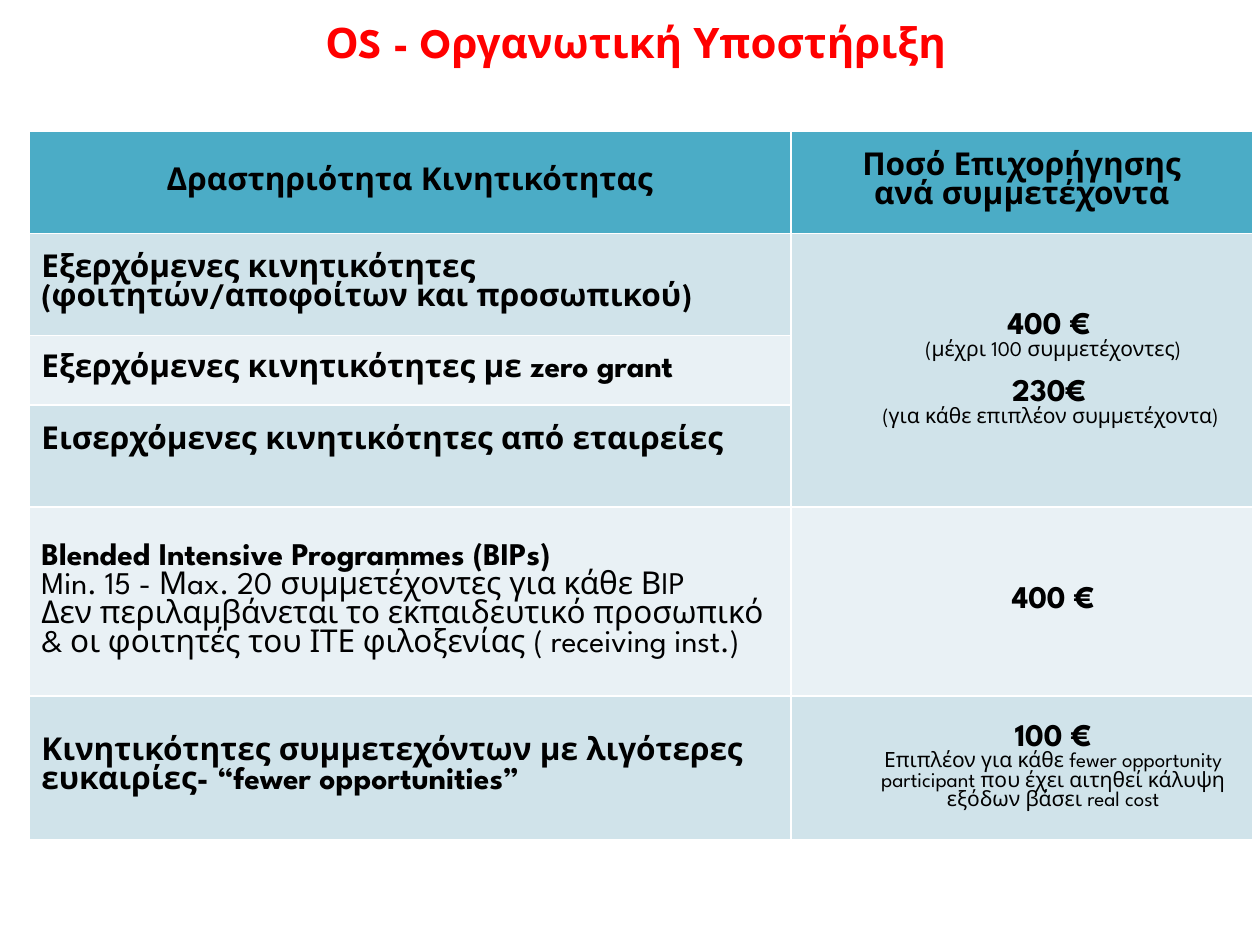
from lxml import etree
from pptx import Presentation
from pptx import util as u
from pptx.dml.color import RGBColor
from pptx.enum import text
from pptx.oxml import ns

RED = RGBColor(0xFF, 0x00, 0x00)
BLACK = RGBColor(0x00, 0x00, 0x00)
TEAL = RGBColor(0x4B, 0xAC, 0xC6)
BLUE = RGBColor(0xD0, 0xE3, 0xEA)
PALE = RGBColor(0xE9, 0xF1, 0xF5)
FONT = "League Spartan"
LEFT, CENTER = text.PP_ALIGN.LEFT, text.PP_ALIGN.CENTER


def write(frame, content, *, size=18, bold=True, color=BLACK, align=LEFT, indent=0, before=0):
    paragraph = frame.paragraphs[0]
    if paragraph.runs:
        paragraph = frame.add_paragraph()
    paragraph.alignment = align
    paragraph.space_before = u.Pt(before)
    if indent:
        properties = paragraph._p.get_or_add_pPr()
        properties.set("marL", str(u.Pt(indent)))
        properties.set("indent", "0")
    run = paragraph.add_run()
    run.text = content
    run.font.name = FONT
    run.font.size = u.Pt(size)
    run.font.bold = bold
    run.font.color.rgb = color


def add_borders(cell):
    properties = cell._tc.get_or_add_tcPr()
    for position, side in enumerate(("lnL", "lnR", "lnT", "lnB")):
        line = etree.Element(ns.qn("a:" + side), w=str(u.Pt(1)))
        solid = etree.SubElement(line, ns.qn("a:solidFill"))
        etree.SubElement(solid, ns.qn("a:srgbClr"), val="FFFFFF")
        properties.insert(position, line)


presentation = Presentation()
presentation.slide_width, presentation.slide_height = u.Pt(720), u.Pt(540)
slide = presentation.slides.add_slide(presentation.slide_layouts[5])

title = slide.shapes.title
title.left, title.top, title.width, title.height = u.Pt(42.5), u.Pt(9.4), u.Pt(648), u.Pt(60.5)
frame = title.text_frame
frame.margin_left = frame.margin_right = frame.margin_top = frame.margin_bottom = 0
frame.vertical_anchor = text.MSO_ANCHOR.TOP
write(frame, "ΟS - Oργανωτική Υποστήριξη ", size=24, color=RED, align=CENTER)

column_widths = [435.6, 263.5]
row_heights = [58.3, 58.3, 39.6, 58.3, 108, 82]
row_fills = [TEAL, BLUE, PALE, BLUE, PALE, BLUE]
plain = dict(bold=False)
heading = dict(align=CENTER)
amount = dict(align=CENTER, indent=36)
note = dict(amount, size=12, bold=False)

contents = {
    (0, 0): [("Δραστηριότητα Κινητικότητας", heading)],
    (0, 1): [("Ποσό Επιχορήγησης", heading), ("ανά συμμετέχοντα", heading)],
    (1, 0): [("Εξερχόμενες κινητικότητες ", {}), ("(φοιτητών/αποφοίτων και προσωπικού)", {})],
    (1, 1): [
        ("400 € ", amount),
        ("(μέχρι 100 συμμετέχοντες)", note),
        ("230€ ", dict(amount, before=11)),
        ("(για κάθε επιπλέον συμμετέχοντα) ", note),
    ],
    (2, 0): [("Εξερχόμενες κινητικότητες με zero grant", {})],
    (3, 0): [("Εισερχόμενες κινητικότητες από εταιρείες", {})],
    (4, 0): [
        ("Blended Intensive Programmes (BIPs)", {}),
        ("Min. 15 - Μax. 20 συμμετέχοντες για κάθε ΒIP", plain),
        ("Δεν περιλαμβάνεται το εκπαιδευτικό προσωπικό & οι φοιτητές του ΙΤΕ φιλοξενίας "
         "( receiving inst.)", plain),
    ],
    (4, 1): [("400 €", amount)],
    (5, 0): [("Κινητικότητες συμμετεχόντων με λιγότερες ευκαιρίες- “fewer opportunities”", {})],
    (5, 1): [
        ("100 €", amount),
        ("Επιπλέον για κάθε fewer opportunity participant που έχει αιτηθεί κάλυψη εξόδων "
         "βάσει real cost", note),
    ],
}

table = slide.shapes.add_table(
    len(row_heights), len(column_widths), u.Pt(16.5), u.Pt(75.2),
    u.Pt(sum(column_widths)), u.Pt(sum(row_heights))).table
for column, width in zip(table.columns, column_widths):
    column.width = u.Pt(width)
for row, height, fill in zip(table.rows, row_heights, row_fills):
    row.height = u.Pt(height)
    for cell in row.cells:
        cell.fill.solid()
        cell.fill.fore_color.rgb = fill
        cell.vertical_anchor = text.MSO_ANCHOR.MIDDLE
        add_borders(cell)

table.cell(1, 1).merge(table.cell(3, 1))
table.cell(3, 0).margin_bottom = u.Pt(20)
for (row_index, column_index), lines in contents.items():
    for content, style in lines:
        write(table.cell(row_index, column_index).text_frame, content, **style)

presentation.save("out.pptx")
